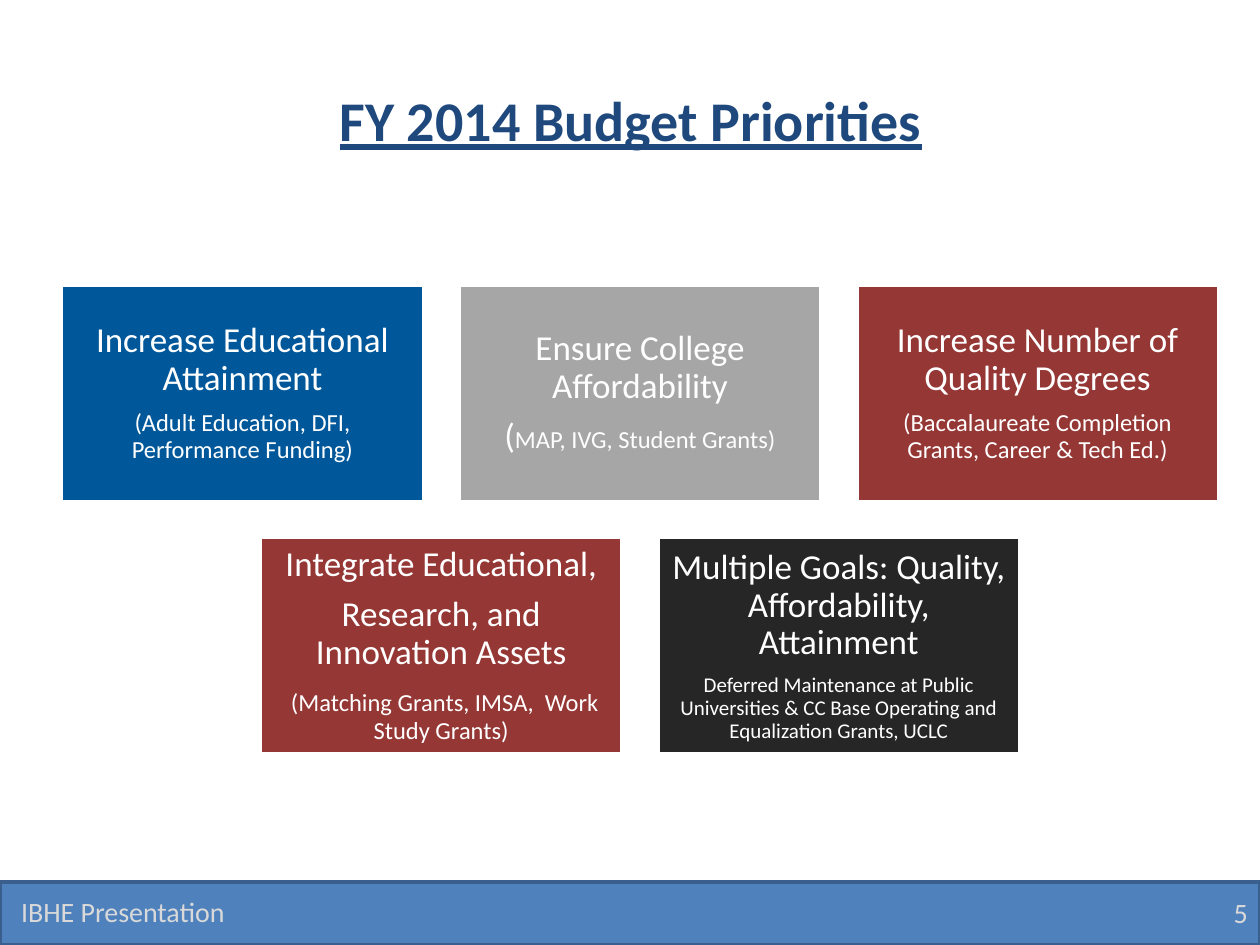
from pptx import Presentation
from pptx.dml.color import RGBColor
from pptx.enum.shapes import MSO_SHAPE
from pptx.enum.text import MSO_ANCHOR, PP_ALIGN
from pptx.util import Inches, Pt

RECTANGLE = MSO_SHAPE.RECTANGLE
MIDDLE = MSO_ANCHOR.MIDDLE
LEFT, CENTER, RIGHT = PP_ALIGN.LEFT, PP_ALIGN.CENTER, PP_ALIGN.RIGHT

WHITE = RGBColor(0xFF, 0xFF, 0xFF)
NAVY = RGBColor(0x1F, 0x49, 0x7D)
BLUE = RGBColor(0x00, 0x58, 0x9A)
GRAY = RGBColor(0xA6, 0xA6, 0xA6)
RED = RGBColor(0x95, 0x37, 0x35)
BLACK = RGBColor(0x26, 0x26, 0x26)
BAR_FILL = RGBColor(0x4F, 0x81, 0xBD)
BAR_LINE = RGBColor(0x3A, 0x5F, 0x8C)
PALE = RGBColor(0xD9, 0xD9, 0xD9)

FONT = "Calibri"
WIDTH, HEIGHT = 10, 7.5
CARD_WIDTH, CARD_HEIGHT = 2.87, 1.72
GAP = 0.285
GRID_CENTER, GRID_TOP = 5.08, 2.26
PARAGRAPH_GAP = 0.35  # share of the text size

# Each card: fill, then paragraphs made of (text, size) spans.
CARD_ROWS = [
    [
        (BLUE, [[("Increase Educational Attainment", 20)],
                [("(Adult Education, DFI, Performance Funding)", 14)]]),
        (GRAY, [[("Ensure College Affordability", 20)],
                [("(", 20), ("MAP, IVG, Student Grants)", 14)]]),
        (RED, [[("Increase Number of Quality Degrees", 20)],
               [("(Baccalaureate Completion Grants, Career & Tech Ed.)", 14)]]),
    ],
    [
        (RED, [[("Integrate Educational,", 20)],
               [("Research, and Innovation Assets", 20)],
               [(" ", 18), ("(Matching Grants, IMSA,  Work Study Grants)", 14)]]),
        (BLACK, [[("Multiple Goals: Quality, Affordability, Attainment", 20)],
                 [("Deferred Maintenance at Public Universities & CC Base "
                   "Operating and Equalization Grants, UCLC", 12)]]),
    ],
]


def apply_format(target, values):
    for name, value in values.items():
        setattr(target, name, value)


def add_span(para, text, size, color, **extra):
    span = para.add_run()
    span.text = text
    apply_format(span.font, {"name": FONT, "size": Pt(size), **extra})
    span.font.color.rgb = color


def add_rectangle(page, place, fill, line):
    box = page.shapes.add_shape(RECTANGLE, *map(Inches, place))
    box.shadow.inherit = False
    box.fill.solid()
    box.fill.fore_color.rgb = fill
    box.line.color.rgb = line
    box.line.width = Pt(2)
    return box


def add_card(page, left, top, fill, paragraphs):
    box = add_rectangle(page, (left, top, CARD_WIDTH, CARD_HEIGHT), fill, WHITE)
    frame = box.text_frame
    sides = ("left", "top", "right", "bottom")
    apply_format(frame, {f"margin_{side}": Inches(0.08) for side in sides})
    apply_format(frame, {"word_wrap": True, "vertical_anchor": MIDDLE})
    for index, spans in enumerate(paragraphs):
        para = frame.add_paragraph() if index else frame.paragraphs[0]
        largest = max(size for _, size in spans)
        apply_format(para, {"alignment": CENTER, "line_spacing": 0.9,
                            "space_after": Pt(PARAGRAPH_GAP * largest)})
        for text, size in spans:
            add_span(para, text, size, WHITE)


def add_card_grid(page):
    """Center each row of cards on the same vertical axis."""
    for row, cards in enumerate(CARD_ROWS):
        row_width = len(cards) * (CARD_WIDTH + GAP) - GAP
        top = GRID_TOP + row * (CARD_HEIGHT + GAP)
        for column, (fill, paragraphs) in enumerate(cards):
            left = GRID_CENTER - row_width / 2 + column * (CARD_WIDTH + GAP)
            add_card(page, left, top, fill, paragraphs)


def add_title(page, text):
    title = page.shapes.title
    apply_format(title, {"left": Inches(0.88), "top": Inches(0.16),
                         "width": Inches(8.25), "height": Inches(1.57)})
    title.text_frame.vertical_anchor = MIDDLE
    para = title.text_frame.paragraphs[0]
    para.alignment = CENTER
    add_span(para, text, 32, NAVY, bold=True, underline=True)


def add_label(page, place, text, alignment):
    box = page.shapes.add_textbox(*map(Inches, place))
    apply_format(box.text_frame, {"word_wrap": True, "vertical_anchor": MIDDLE})
    para = box.text_frame.paragraphs[0]
    para.alignment = alignment
    add_span(para, text, 16, PALE)


def add_footer(page):
    add_rectangle(page, (0, HEIGHT - 0.5, WIDTH, 0.5), BAR_FILL, BAR_LINE)
    add_label(page, (0.07, 7.03, 3.17, 0.4), "IBHE Presentation", LEFT)
    add_label(page, (9.51, 7.04, 0.49, 0.4), "5", RIGHT)


def main():
    deck = Presentation()
    apply_format(deck, {"slide_width": Inches(WIDTH),
                        "slide_height": Inches(HEIGHT)})
    page = deck.slides.add_slide(deck.slide_layouts.get_by_name("Title Only"))
    add_footer(page)
    add_title(page, "FY 2014 Budget Priorities")
    add_card_grid(page)
    deck.save("out.pptx")


if __name__ == "__main__":
    main()
